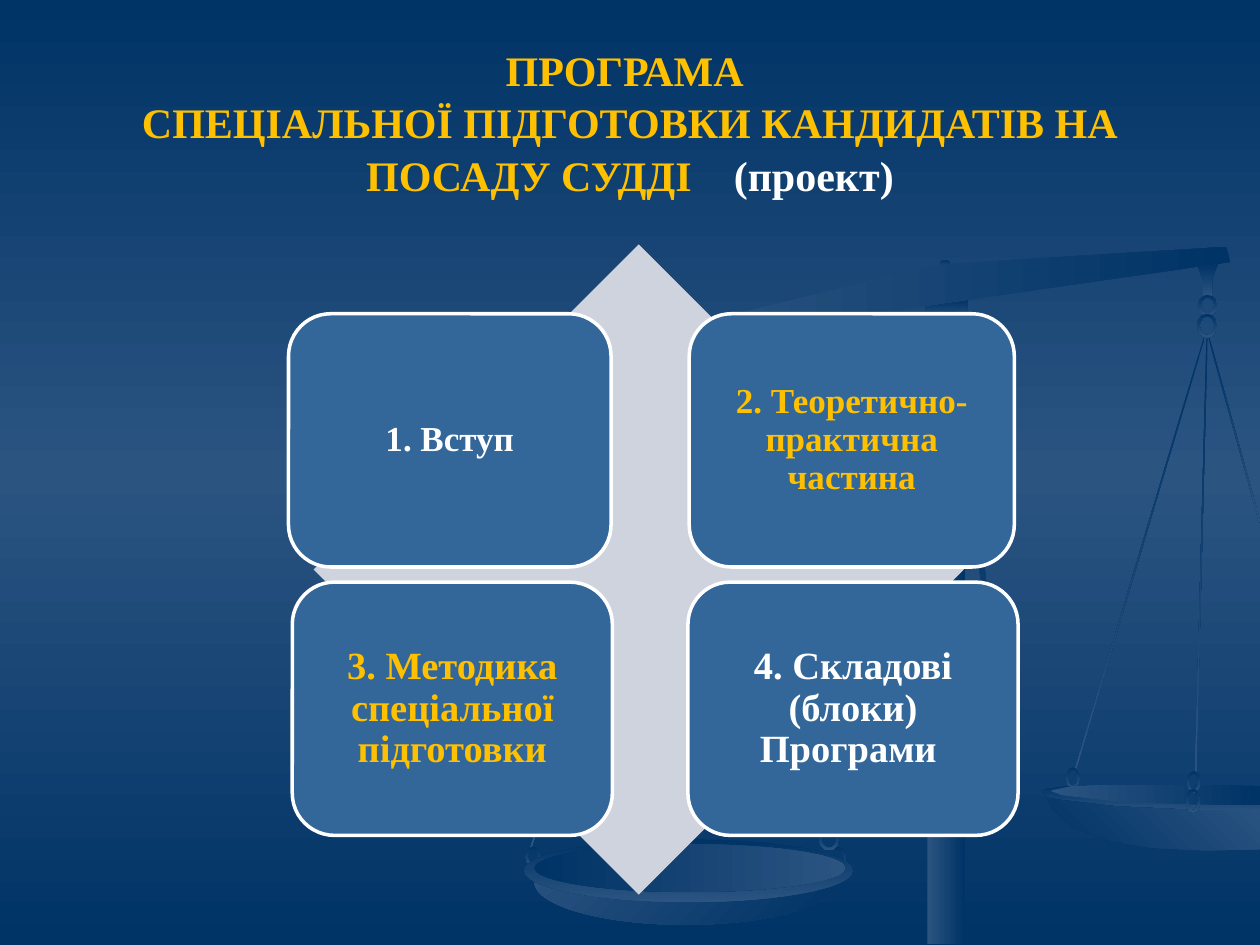
"""Build the slide with the four parts of the judge training programme."""
from math import cos, pi, sin

from lxml.etree import SubElement
from pptx import Presentation
from pptx.dml.color import RGBColor
from pptx.enum.shapes import MSO_SHAPE
from pptx.enum.text import MSO_ANCHOR, PP_ALIGN
from pptx.oxml.ns import qn
from pptx.util import Cm, Pt

NAVY = RGBColor(0x00, 0x33, 0x66)
STEEL = RGBColor(0x2B, 0x54, 0x81)
BLUE = RGBColor(0x33, 0x66, 0x99)
SILVER = RGBColor(0xCE, 0xD3, 0xDE)
GOLD = RGBColor(0xFF, 0xC0, 0x00)
WHITE = RGBColor(0xFF, 0xFF, 0xFF)
FONT = "Times New Roman"
UNIT = 0.0254
LIGHTEN, DARKEN = (NAVY, STEEL), (STEEL, NAVY)

TITLE_BOX = (50, 21, 900, 150)
TITLE = [
    ("ПРОГРАМА \vСПЕЦІАЛЬНОЇ ПІДГОТОВКИ КАНДИДАТІВ НА ПОСАДУ СУДДІ", GOLD, 0),
    (" ", GOLD, 18),
    ("(проект)", WHITE, 0),
]
DIAMOND = (249, 194, 516, 516)
CARDS = [
    ("1. Вступ", (229, 249, 256, 201), 20, WHITE),
    ("2. Теоретично-практична частина", (547, 249, 258, 201), 20, GOLD),
    ("3. Методика спеціальної підготовки", (232, 462, 254, 201), 22, GOLD),
    ("4. Складові (блоки) Програми ", (546, 462, 262, 201), 22, WHITE),
]

RIGHT_PAN_RIM = [
    (958, 624), (910, 624), (865, 623), (846, 624), (831, 626), (827, 628),
    (832, 633), (852, 638), (894, 642), (935, 644), (1000, 645), (1000, 626)]
RIGHT_PAN_BOWL = [
    (831, 633), (835, 642), (852, 657), (882, 668), (914, 673), (957, 675),
    (1000, 674), (1000, 643), (953, 643), (886, 640), (843, 635)]
RIGHT_PAN_INSIDE = [
    (956, 623), (886, 623), (851, 624), (836, 627), (834, 628), (843, 631),
    (878, 635), (933, 638), (1000, 639), (1000, 624)]
LEFT_HANGER = [(549, 268), (531, 270), (536, 280), (536, 294), (544, 294), (544, 279)]
RIGHT_HANGER = [(967, 209), (950, 210), (955, 222), (955, 236), (962, 236), (962, 221)]
BEAM = [(973, 196), (976, 208), (525, 273), (524, 264), (737, 212), (759, 209)]
POINTER = [(791, 539), (750, 280), (748, 268), (760, 265), (763, 277)]
CAP = [
    (752, 247), (763, 248), (772, 253), (777, 260), (779, 271),
    (724, 271), (726, 260), (732, 253), (740, 248)]

SCALES = [
    ("bar", (734, 237, 34, 18), LIGHTEN, 90, 0),
    ("oval", (746, 206, 8, 8), LIGHTEN, 90, 0),
    ("bar", (904, 260, 1, 360), LIGHTEN, 90, 16.6),
    ("ring", (846, 609, 11, 17), LIGHTEN, 90, 0),
    ("bar", (953, 266, 1, 347), LIGHTEN, 90, 1.5),
    ("bar", (979, 264, 1, 153), LIGHTEN, 90, 344.6),
    ("bar", (598, 315, 1, 353), LIGHTEN, 90, 341),
    ("bar", (479, 316, 1, 368), LIGHTEN, 90, 18.6),
    ("bar", (527, 325, 1, 331), LIGHTEN, 90, 4.2),
    ("outline", RIGHT_PAN_RIM, LIGHTEN, 90, 0),
    ("outline", RIGHT_PAN_BOWL, LIGHTEN, 315, 0),
    ("outline", RIGHT_PAN_INSIDE, DARKEN, 0, 0),
    ("outline", LEFT_HANGER, LIGHTEN, 90, 0),
    ("ring", (531, 293, 16, 17), LIGHTEN, 90, 0),
    ("ring", (531, 307, 16, 19), LIGHTEN, 90, 0),
    ("outline", RIGHT_HANGER, LIGHTEN, 90, 0),
    ("ring", (951, 234, 15, 17), LIGHTEN, 90, 0),
    ("ring", (950, 249, 16, 19), LIGHTEN, 90, 0),
    ("ring", (942, 612, 11, 17), LIGHTEN, 90, 0),
    ("outline", BEAM, DARKEN, 0, 0),
    ("ring", (509, 655, 15, 16), LIGHTEN, 90, 0),
    ("ring", (656, 672, 16, 19), LIGHTEN, 90, 0),
    ("ring", (417, 672, 12, 16), LIGHTEN, 90, 0),
    ("oval", (424, 666, 240, 68), DARKEN, 45, 0),
    ("oval", (416, 666, 261, 50), LIGHTEN, 90, 0),
    ("oval", (424, 670, 247, 38), LIGHTEN, 0, 0),
    ("ring", (650, 658, 16, 17), LIGHTEN, 90, 0),
    ("ring", (941, 626, 12, 19), LIGHTEN, 90, 0),
    ("bar", (736, 308, 30, 441), DARKEN, 0, 0),
    ("outline", POINTER, DARKEN, 45, 0),
    ("outline", CAP, DARKEN, 0, 0),
]
PRESETS = {"bar": MSO_SHAPE.RECTANGLE, "oval": MSO_SHAPE.OVAL}


def lengths(box):
    return [Cm(value * UNIT) for value in box]


def set_gradient(fill, element, colors, angle):
    fill.gradient()
    gradient = next(element.iter(qn("a:gradFill")))
    for child in list(gradient):
        gradient.remove(child)
    stops = SubElement(gradient, qn("a:gsLst"))
    for index, color in enumerate(colors):
        position = 100000 * index // (len(colors) - 1)
        stop = SubElement(stops, qn("a:gs"), pos=str(position))
        SubElement(stop, qn("a:srgbClr"), val=str(color))
    SubElement(gradient, qn("a:lin"), ang=str(angle * 60000), scaled="0")


def ellipse_points(box, inset, turn):
    left, top, width, height = box
    return [(left + width / 2 + (width / 2 - inset) * cos(turn * step * pi / 6),
             top + height / 2 + (height / 2 - inset) * sin(turn * step * pi / 6))
            for step in range(12)]


def add_outline(slide, *contours):
    builder = slide.shapes.build_freeform(*contours[0][0], scale=float(Cm(UNIT)))
    builder.add_line_segments(contours[0][1:], close=True)
    for contour in contours[1:]:
        builder.move_to(*contour[0])
        builder.add_line_segments(contour[1:], close=True)
    return builder.convert_to_shape()


def add_scale_part(slide, kind, geometry, colors, angle, rotation):
    if kind == "outline":
        part = add_outline(slide, geometry)
    elif kind == "ring":
        part = add_outline(slide, ellipse_points(geometry, 0, 1),
                           ellipse_points(geometry, 2, -1))
    else:
        part = slide.shapes.add_shape(PRESETS[kind], *lengths(geometry))
    part.rotation = rotation
    part.shadow.inherit = False
    part.line.fill.background()
    set_gradient(part.fill, part._element, colors, angle)


def add_solid(slide, preset, box, color):
    shape = slide.shapes.add_shape(preset, *lengths(box))
    shape.shadow.inherit = False
    shape.fill.solid()
    shape.fill.fore_color.rgb = color
    shape.line.fill.background()
    return shape


def write_text(shape, spans, size, line_spacing=1.0, margin=0.2):
    frame = shape.text_frame
    frame.word_wrap = True
    frame.vertical_anchor = MSO_ANCHOR.MIDDLE
    frame.margin_left = frame.margin_right = Cm(margin)
    frame.margin_top = frame.margin_bottom = Cm(margin)
    para = frame.paragraphs[0]
    para.alignment = PP_ALIGN.CENTER
    para.line_spacing = line_spacing
    for text, color, tracking in spans:
        for index, line in enumerate(text.split("\v")):
            if index:
                para.add_line_break()
            span = para.add_run()
            span.text = line
            span.font.name, span.font.size = FONT, Pt(size)
            span.font.bold = True
            span.font.color.rgb = color
            if tracking:
                span.font._element.set("spc", str(tracking * 100))


def main():
    deck = Presentation()
    deck.slide_width, deck.slide_height = Cm(25.4), Cm(19.05)
    slide = deck.slides.add_slide(deck.slide_layouts[6])
    set_gradient(slide.background.fill, slide._element, (NAVY, STEEL, NAVY), 90)
    for part in SCALES:
        add_scale_part(slide, *part)
    title = slide.shapes.add_textbox(*lengths(TITLE_BOX))
    write_text(title, TITLE, 24, line_spacing=1.05)
    add_solid(slide, MSO_SHAPE.DIAMOND, DIAMOND, SILVER)
    for text, box, size, color in CARDS:
        card = add_solid(slide, MSO_SHAPE.ROUNDED_RECTANGLE, box, BLUE)
        card.line.color.rgb = WHITE
        card.line.width = Pt(2)
        write_text(card, [(text, color, 0)], size, line_spacing=0.9)
    deck.save("out.pptx")


if __name__ == "__main__":
    main()
